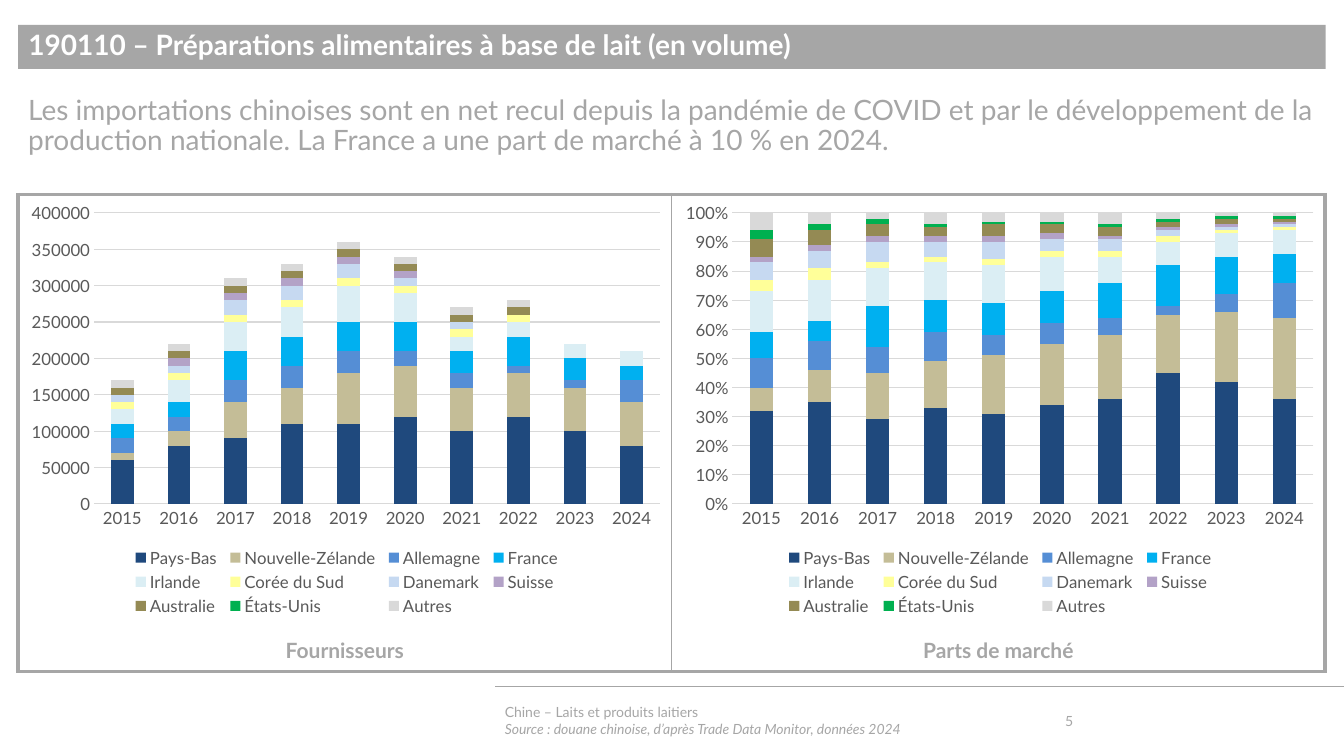
from lxml.etree import SubElement
from pptx import Presentation
from pptx.chart.data import CategoryChartData
from pptx.dml.color import RGBColor
from pptx.enum.chart import XL_CHART_TYPE, XL_LEGEND_POSITION, XL_TICK_MARK
from pptx.enum.shapes import MSO_CONNECTOR
from pptx.enum.text import MSO_ANCHOR, PP_ALIGN
from pptx.oxml import parse_xml
from pptx.oxml.ns import nsdecls, qn
from pptx.util import Pt

FONT, GREY, WHITE = "Lato", "A6A6A6", "FFFFFF"
LABEL, GRID = "595959", "D9D9D9"

TITLE = "190110 – Préparations alimentaires à base de lait (en volume)"
MESSAGE = ("Les importations chinoises sont en net recul depuis la pandémie de COVID "
           "et par le développement de la production nationale. "
           "La France a une part de marché à 10 % en 2024.")
FOOTER = ["Chine – Laits et produits laitiers",
          "Source : douane chinoise, d’après Trade Data Monitor, données 2024"]
PAGE_NUMBER = "5"

YEARS = [str(year) for year in range(2015, 2025)]
# supplier, colour, volume in tens of thousands, market share in percent
SUPPLIERS = [
    ("Pays-Bas", "1F497D", [6, 8, 9, 11, 11, 12, 10, 12, 10, 8],
     [32, 35, 29, 33, 31, 34, 36, 45, 42, 36]),
    ("Nouvelle-Zélande", "C4BD97", [1, 2, 5, 5, 7, 7, 6, 6, 6, 6],
     [8, 11, 16, 16, 20, 21, 22, 20, 24, 28]),
    ("Allemagne", "558ED5", [2, 2, 3, 3, 3, 2, 2, 1, 1, 3],
     [10, 10, 9, 10, 7, 7, 6, 3, 6, 12]),
    ("France", "00B0F0", [2, 2, 4, 4, 4, 4, 3, 4, 3, 2],
     [9, 7, 14, 11, 11, 11, 12, 14, 13, 10]),
    ("Irlande", "DBEEF4", [2, 3, 4, 4, 5, 4, 2, 2, 2, 2],
     [14, 14, 13, 13, 13, 12, 9, 8, 8, 8]),
    ("Corée du Sud", "FFFF99", [1, 1, 1, 1, 1, 1, 1, 1, 0, 0],
     [4, 4, 2, 2, 2, 2, 2, 2, 1, 1]),
    ("Danemark", "C6D9F1", [1, 1, 2, 2, 2, 1, 1, 0, 0, 0],
     [6, 6, 7, 5, 6, 4, 4, 2, 1, 1]),
    ("Suisse", "B3A2C7", [0, 1, 1, 1, 1, 1, 0, 0, 0, 0],
     [2, 2, 2, 2, 2, 2, 1, 1, 1, 1]),
    ("Australie", "948A54", [1, 1, 1, 1, 1, 1, 1, 1, 0, 0],
     [6, 5, 4, 3, 4, 3, 3, 2, 2, 1]),
    ("États-Unis", "00B050", [0, 0, 0, 0, 0, 0, 0, 0, 0, 0],
     [3, 2, 2, 1, 1, 1, 1, 1, 1, 1]),
    ("Autres", "D9D9D9", [1, 1, 1, 1, 1, 1, 1, 1, 0, 0],
     [7, 4, 3, 4, 3, 3, 4, 2, 1, 1]),
]
volumes = [[volume * 10000 for volume in row] for _, _, row, _ in SUPPLIERS]
shares = [[percent / 100 for percent in row] for _, _, _, row in SUPPLIERS]

# caption, values, axis maximum, axis step, number format, plot left as a fraction
PANELS = [
    ("Fournisseurs", volumes, 400000, 50000, "General", 0.116),
    ("Parts de marché", shares, 1, 0.1, "0%", 0.093),
]

SLIDE_WIDTH, SLIDE_HEIGHT = 960, 540
LEFT, PANEL_TOP, PANEL_WIDTH, PANEL_HEIGHT = 13, 139, 466.8, 340.6
CHART_HEIGHT, CAPTION_TOP, CAPTION_HEIGHT = 304, 451.6, 25
FOOTER_LEFT, FOOTER_TOP, FOOTER_HEIGHT = 353.5, 500.2, 29
RULE_TOP = 490.3
PLOT_RIGHT = 0.982


def color(hex_code):
    return RGBColor.from_string(hex_code)


def style_font(font, size, hex_code, bold=False, italic=False):
    font.name, font.size = FONT, Pt(size)
    font.bold, font.italic = bold, italic
    font.color.rgb = color(hex_code)


def add_text(page, lines, left, top, width, height, size, bold=False,
             align=PP_ALIGN.LEFT, anchor=MSO_ANCHOR.TOP):
    box = page.shapes.add_textbox(Pt(left), Pt(top), Pt(width), Pt(height))
    frame = box.text_frame
    frame.word_wrap, frame.vertical_anchor = True, anchor
    frame.text = "\n".join(lines)
    for para in frame.paragraphs:
        para.alignment = align
        for span in para.runs:
            style_font(span.font, size, GREY, bold)
    return frame


def set_borders(cell, widths):
    """Draw grey borders; widths are left, right, top, bottom in points."""
    properties = cell._tc.get_or_add_tcPr()
    for side, width in zip("LRTB", widths):
        line = SubElement(properties, qn(f"a:ln{side}"), w=str(Pt(width)))
        fill = SubElement(line, qn("a:solidFill"))
        SubElement(fill, qn("a:srgbClr"), val=GREY)
    cell.fill.background()


def manual_layout(x, y, width, height, inner=False):
    target = '<c:layoutTarget val="inner"/>' if inner else ""
    return parse_xml(
        f'<c:layout {nsdecls("c")}><c:manualLayout>{target}'
        '<c:xMode val="edge"/><c:yMode val="edge"/>'
        f'<c:x val="{x}"/><c:y val="{y}"/><c:w val="{width:.3f}"/><c:h val="{height}"/>'
        '</c:manualLayout></c:layout>')


def place_chart_parts(chart, plot_left):
    plot_area = chart.element.find(".//" + qn("c:plotArea"))
    legend = chart.element.find(".//" + qn("c:legend"))
    for parent in (plot_area, legend):
        for layout in parent.findall(qn("c:layout")):
            parent.remove(layout)
    plot_area.insert(0, manual_layout(plot_left, 0.043, PLOT_RIGHT - plot_left, 0.684, True))
    legend.find(qn("c:legendPos")).addnext(manual_layout(0.168, 0.82, 0.67, 0.18))


def add_supplier_chart(page, left, rows, maximum, step, number_format, plot_left):
    data = CategoryChartData(number_format=number_format)
    data.categories = YEARS
    for (name, *_), row in zip(SUPPLIERS, rows):
        data.add_series(name, row)
    chart = page.shapes.add_chart(XL_CHART_TYPE.COLUMN_STACKED, Pt(left), Pt(PANEL_TOP),
                                  Pt(PANEL_WIDTH), Pt(CHART_HEIGHT), data).chart
    chart.has_title = False
    style_font(chart.font, 12, "000000")
    plot = chart.plots[0]
    plot.gap_width, plot.overlap, plot.vary_by_categories = 150, 100, False
    for series, (_, hex_code, *_) in zip(plot.series, SUPPLIERS):
        series.format.fill.solid()
        series.format.fill.fore_color.rgb = color(hex_code)

    years, values = chart.category_axis, chart.value_axis
    for axis in (years, values):
        axis.major_tick_mark = axis.minor_tick_mark = XL_TICK_MARK.NONE
        style_font(axis.tick_labels.font, 12, LABEL)
    values.minimum_scale, values.maximum_scale, values.major_unit = 0, maximum, step
    values.tick_labels.number_format = number_format
    values.tick_labels.number_format_is_linked = False
    values.format.line.fill.background()
    for line in (years.format.line, values.major_gridlines.format.line):
        line.color.rgb, line.width = color(GRID), Pt(0.75)

    chart.has_legend = True
    chart.legend.position = XL_LEGEND_POSITION.BOTTOM
    chart.legend.include_in_layout = False
    style_font(chart.legend.font, 12, LABEL)
    place_chart_parts(chart, plot_left)


def main():
    deck = Presentation()
    deck.slide_width, deck.slide_height = Pt(SLIDE_WIDTH), Pt(SLIDE_HEIGHT)
    page = deck.slides.add_slide(deck.slide_layouts[5])

    title = page.shapes.title
    title.left, title.top, title.width, title.height = Pt(LEFT), Pt(17.7), Pt(934), Pt(31.5)
    title.fill.solid()
    title.fill.fore_color.rgb = color(GREY)
    title.text_frame.text = TITLE
    title.text_frame.vertical_anchor = MSO_ANCHOR.MIDDLE
    heading = title.text_frame.paragraphs[0]
    heading.alignment, heading.line_spacing = PP_ALIGN.LEFT, 0.9
    style_font(heading.runs[0].font, 20, WHITE, bold=True)

    message = add_text(page, [MESSAGE], LEFT, 65, 2 * PANEL_WIDTH, 58, 20)
    message.paragraphs[0].line_spacing = 0.9

    rule = page.shapes.add_connector(MSO_CONNECTOR.STRAIGHT, Pt(SLIDE_WIDTH), Pt(RULE_TOP),
                                     Pt(FOOTER_LEFT), Pt(RULE_TOP))
    rule.line.color.rgb, rule.line.width = color(GREY), Pt(0.5)
    SubElement(rule.element.spPr, qn("a:effectLst"))

    table = page.shapes.add_table(1, 2, Pt(LEFT), Pt(PANEL_TOP),
                                  Pt(2 * PANEL_WIDTH), Pt(PANEL_HEIGHT)).table
    table.first_row = table.horz_banding = False
    set_borders(table.cell(0, 0), (3, 1, 3, 3))
    set_borders(table.cell(0, 1), (1, 3, 3, 3))

    for index, (caption, *chart_settings) in enumerate(PANELS):
        left = LEFT + index * PANEL_WIDTH
        add_supplier_chart(page, left, *chart_settings)
        add_text(page, [caption], left, CAPTION_TOP, PANEL_WIDTH, CAPTION_HEIGHT, 15,
                 bold=True, align=PP_ALIGN.CENTER)

    footer = add_text(page, FOOTER, FOOTER_LEFT, FOOTER_TOP, 391, FOOTER_HEIGHT, 10,
                      anchor=MSO_ANCHOR.MIDDLE)
    footer.paragraphs[1].runs[0].font.italic = True
    add_text(page, [PAGE_NUMBER], 753.8, FOOTER_TOP, 71, FOOTER_HEIGHT, 10,
             anchor=MSO_ANCHOR.MIDDLE)
    deck.save("out.pptx")


if __name__ == "__main__":
    main()
